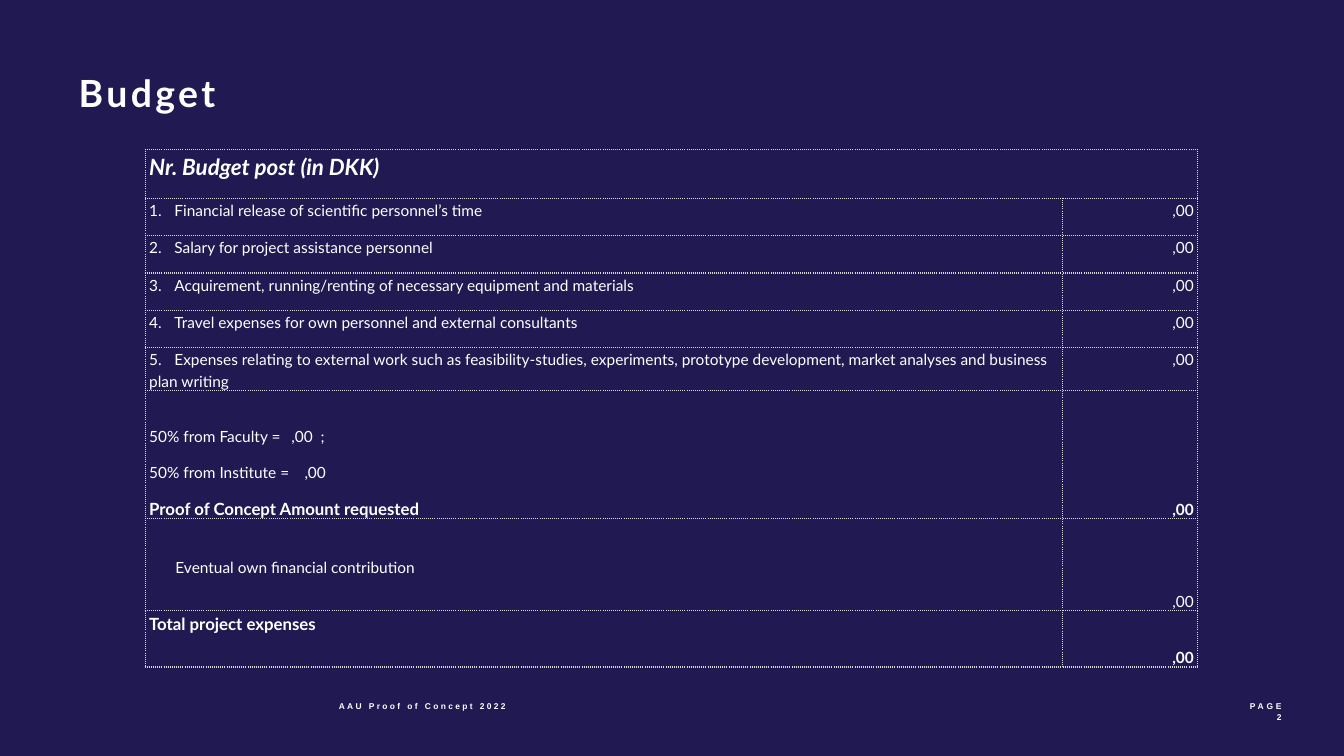
"""Build the budget slide of a proof of concept application."""
from lxml.etree import SubElement
from pptx import Presentation
from pptx.dml.color import RGBColor
from pptx.enum.text import MSO_ANCHOR, MSO_AUTO_SIZE, PP_ALIGN
from pptx.oxml.ns import qn
from pptx.util import Inches, Pt

WHITE, NAVY, BORDER = "FFFFFF", "211A52", "D9D9D9"
TITLE = "Budget"
FOOTER = "AAU Proof of Concept 2022"
PAGE = ["PAGE", "2"]
HEADING = "Nr. Budget post (in DKK)"
AMOUNT = ",00"
POSTS = [
    "Financial release of scientific personnel’s time",
    "Salary for project assistance personnel",
    "Acquirement, running/renting of necessary equipment and materials",
    "Travel expenses for own personnel and external consultants",
    "Expenses relating to external work such as feasibility-studies, experiments, "
    "prototype development, market analyses and business plan writing",
]
SHARES = [("50% from Faculty =\t,00\t;", [1.41, 1.7]), ("50% from Institute =\t,00", [1.54])]
REQUESTED = "Proof of Concept Amount requested"
CONTRIBUTION = "Eventual own financial contribution"
TOTAL = "Total project expenses"

COLUMN_WIDTHS = [9.1, 1.34]
ROW_HEIGHTS = [0.49] + [0.37] * 4 + [0.42, 1.26, 0.91, 0.56]
TABLE_LEFT, TABLE_TOP = 1.44, 1.48

POST_FONT = {"name": "Lato", "size": Pt(11), "bold": False}
SUM_FONT = {"name": "Lato", "size": Pt(12), "bold": True}
AMOUNT_SUM_FONT = {**POST_FONT, "bold": True}
HEADING_FONT = {"name": "Lato", "size": Pt(16), "bold": True, "italic": True}
TITLE_FONT = {"name": "Lato", "size": Pt(26.7), "bold": True}
SMALL_FONT = {"name": "Arial", "size": Pt(6), "bold": True}


def color(hex_value):
    return RGBColor.from_string(hex_value)


def apply(target, values):
    for name, value in values.items():
        setattr(target, name, value)


def add_line(frame, index, text, font, tabs=(), tracking=0, **layout):
    paragraph = frame.paragraphs[0] if index == 0 else frame.add_paragraph()
    apply(paragraph, layout)
    if tabs:
        stops = SubElement(paragraph._p.get_or_add_pPr(), qn("a:tabLst"))
        for position in tabs:
            SubElement(stops, qn("a:tab"), pos=str(Inches(position)), algn="l")
    run = paragraph.add_run()
    run.text = text
    apply(run.font, font)
    run.font.color.rgb = color(WHITE)
    if tracking:
        run._r.get_or_add_rPr().set("spc", str(round(tracking * 100)))
    return paragraph


def place(shape, left, top, width, height, **frame_values):
    apply(shape, {"left": Inches(left), "top": Inches(top),
                  "width": Inches(width), "height": Inches(height)})
    margins = {f"margin_{side}": 0 for side in ("left", "right", "top", "bottom")}
    apply(shape.text_frame, {**margins, "word_wrap": True,
                             "auto_size": MSO_AUTO_SIZE.NONE, **frame_values})
    return shape.text_frame


def format_cell(cell):
    apply(cell, {"margin_left": Inches(0.04), "margin_right": Inches(0.04),
                 "margin_top": 0, "margin_bottom": 0})
    properties = cell._tc.get_or_add_tcPr()
    for side in ("lnL", "lnR", "lnT", "lnB"):
        edge = SubElement(properties, qn(f"a:{side}"), w=str(Pt(1)))
        SubElement(SubElement(edge, qn("a:solidFill")), qn("a:srgbClr"), val=BORDER)
        SubElement(edge, qn("a:prstDash"), val="dot")
    cell.fill.background()


def write_cell(cell, lines, **cell_values):
    apply(cell, cell_values)
    for index, (text, font, tabs, align) in enumerate(lines):
        gap = Pt(10) if index < len(lines) - 1 else Pt(0)
        add_line(cell.text_frame, index, text, font, tabs,
                 alignment=align, line_spacing=1.15, space_after=gap)


def add_budget(slide):
    budget = slide.shapes.add_table(
        len(ROW_HEIGHTS), len(COLUMN_WIDTHS), Inches(TABLE_LEFT), Inches(TABLE_TOP),
        Inches(sum(COLUMN_WIDTHS)), Inches(sum(ROW_HEIGHTS))).table
    apply(budget, {"first_row": False, "horz_banding": False})
    for column, width in zip(budget.columns, COLUMN_WIDTHS):
        column.width = Inches(width)
    for row, height in zip(budget.rows, ROW_HEIGHTS):
        row.height = Inches(height)
        for cell in row.cells:
            format_cell(cell)
    budget.cell(0, 0).merge(budget.cell(0, 1))

    left, right = PP_ALIGN.LEFT, PP_ALIGN.RIGHT
    shares = [(text, POST_FONT, tabs, left) for text, tabs in SHARES]
    write_cell(budget.cell(0, 0), [(HEADING, HEADING_FONT, [], left)])
    for number, post in enumerate(POSTS, 1):
        write_cell(budget.cell(number, 0), [(f"{number}.\t{post}", POST_FONT, [0.25], left)])
        write_cell(budget.cell(number, 1), [(AMOUNT, POST_FONT, [], right)])

    requested, contribution, total = range(len(POSTS) + 1, len(ROW_HEIGHTS))
    write_cell(budget.cell(requested, 0), shares + [(REQUESTED, SUM_FONT, [], left)],
               margin_top=Inches(0.34))
    write_cell(budget.cell(contribution, 0), [(CONTRIBUTION, POST_FONT, [], left)],
               margin_top=Inches(0.36), margin_left=Inches(0.3))
    write_cell(budget.cell(total, 0), [(TOTAL, SUM_FONT, [], left)])
    for row, font in ((requested, AMOUNT_SUM_FONT), (contribution, POST_FONT),
                      (total, AMOUNT_SUM_FONT)):
        write_cell(budget.cell(row, 1), [(AMOUNT, font, [], right)],
                   vertical_anchor=MSO_ANCHOR.BOTTOM)


def main():
    deck = Presentation()
    apply(deck, {"slide_width": Inches(13.33), "slide_height": Inches(7.5)})
    slide = deck.slides.add_slide(deck.slide_layouts[1])
    slide.background.fill.solid()
    slide.background.fill.fore_color.rgb = color(NAVY)

    title = place(slide.shapes.title, 0.78, 0.69, 4.89, 0.45,
                  vertical_anchor=MSO_ANCHOR.MIDDLE)
    add_line(title, 0, TITLE, TITLE_FONT, tracking=2.4, alignment=PP_ALIGN.LEFT)

    add_budget(slide)

    footer = place(slide.placeholders[1], 3.36, 6.96, 1.99, 0.31,
                   margin_bottom=Inches(0.05), vertical_anchor=MSO_ANCHOR.TOP)
    footer_line = add_line(footer, 0, FOOTER, SMALL_FONT, tracking=1.7, space_before=Pt(0))
    footer_properties = footer_line._p.get_or_add_pPr()
    for indent in ("marL", "indent"):
        footer_properties.set(indent, "0")
    SubElement(footer_properties, qn("a:buNone"))

    page = place(slide.shapes.add_textbox(0, 0, 0, 0), 11.16, 6.96, 1.55, 0.31)
    for index, text in enumerate(PAGE):
        add_line(page, index, text, SMALL_FONT, tracking=2, alignment=PP_ALIGN.RIGHT)

    deck.save("out.pptx")


if __name__ == "__main__":
    main()
